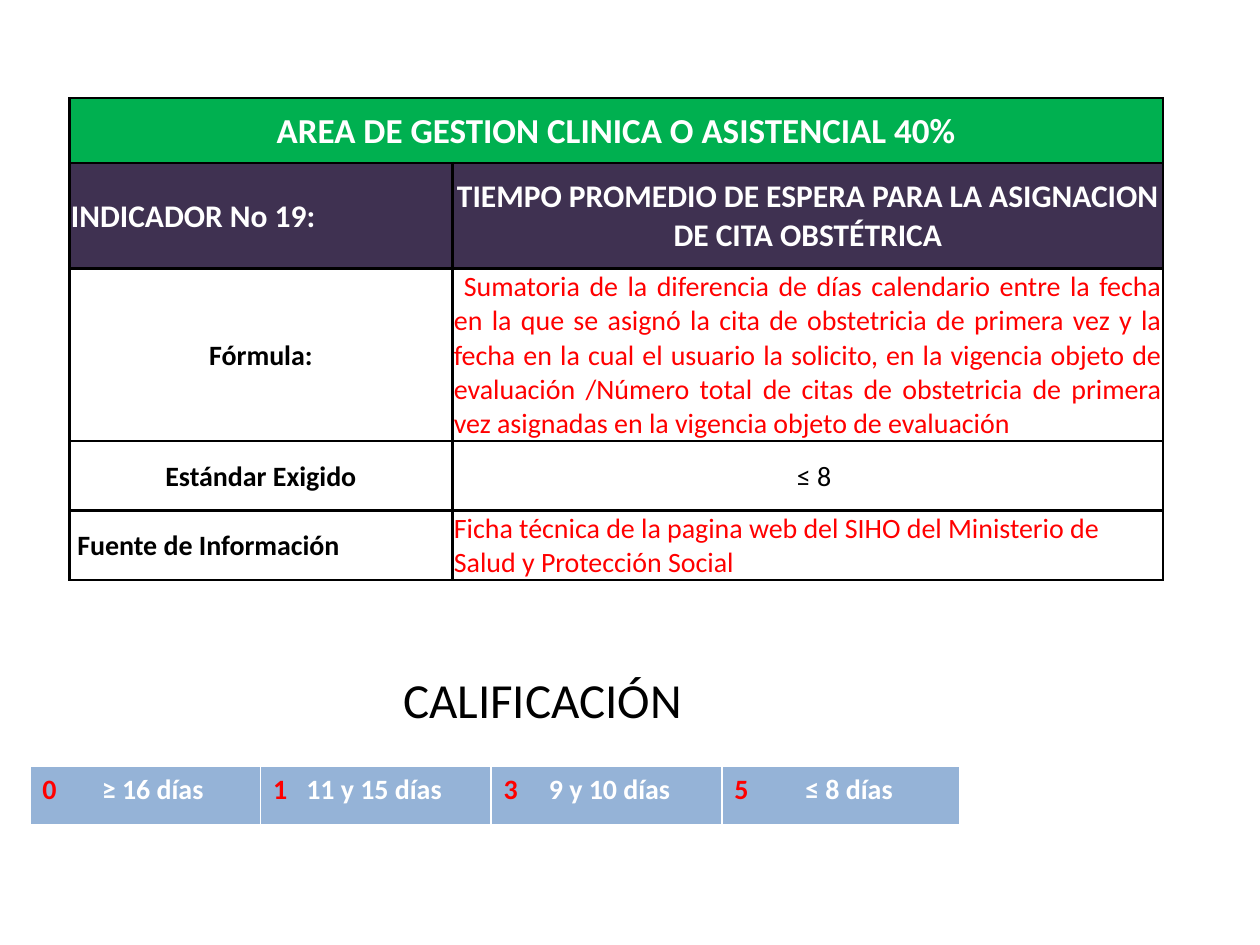
from lxml import etree
from pptx import Presentation
from pptx.dml.color import RGBColor
from pptx.enum.text import MSO_ANCHOR, MSO_AUTO_SIZE, PP_ALIGN
from pptx.oxml.ns import qn
from pptx.util import Cm, Pt

LEFT, CENTER, JUSTIFY = PP_ALIGN.LEFT, PP_ALIGN.CENTER, PP_ALIGN.JUSTIFY
TOP, MIDDLE = MSO_ANCHOR.TOP, MSO_ANCHOR.MIDDLE
COLORS = {"white": "FFFFFF", "black": "000000", "red": "FF0000",
          "green": "00B050", "purple": "3F3151", "blue": "95B3D7"}


def style_run(r, size, color, bold):
    r.font.name = "Calibri"
    r.font.size = Pt(size)
    r.font.bold = bold
    r.font.color.rgb = RGBColor.from_string(COLORS[color])


def style_cell(cell, fill, line, widths):
    tcPr = cell._tc.get_or_add_tcPr()
    for side, width in zip("LRTB", widths):
        ln = etree.SubElement(tcPr, qn(f"a:ln{side}"), w=str(Pt(width)))
        solid = etree.SubElement(ln, qn("a:solidFill"))
        etree.SubElement(solid, qn("a:srgbClr"), val=COLORS[line])
    if fill:
        cell.fill.solid()
        cell.fill.fore_color.rgb = RGBColor.from_string(COLORS[fill])
    else:
        cell.fill.background()


prs = Presentation()
prs.slide_width, prs.slide_height = Cm(25.4), Cm(19.05)
s = prs.slides.add_slide(prs.slide_layouts[5])

title = s.shapes.title
title.left, title.top, title.width, title.height = Cm(7.85), Cm(13.36), Cm(6.17), Cm(1.45)
tf = title.text_frame
tf.text = "CALIFICACIÓN"
tf.word_wrap = False
tf.auto_size = MSO_AUTO_SIZE.SHAPE_TO_FIT_TEXT
tf.vertical_anchor = TOP
tf.paragraphs[0].alignment = CENTER
style_run(tf.paragraphs[0].runs[0], 28, "black", False)

ratings = [("0", "≥ 16 días", 1.2), ("1", "11 y 15 días", 0.67),
           ("3", "9 y 10 días", 0.91), ("5", "≤ 8 días", 1.43)]
tbl = s.shapes.add_table(1, 4, Cm(0.6), Cm(15.45), Cm(18.75), Cm(1.21)).table
tbl.first_row = tbl.horz_banding = False
for col, width in zip(tbl.columns, [4.65, 4.65, 4.65, 4.8]):
    col.width = Cm(width)
for cell, (score, days, tab) in zip(tbl.rows[0].cells, ratings):
    style_cell(cell, "blue", "white", [1, 1, 1, 3])
    p = cell.text_frame.paragraphs[0]
    tabs = etree.SubElement(p._p.get_or_add_pPr(), qn("a:tabLst"))
    etree.SubElement(tabs, qn("a:tab"), pos=str(Cm(tab)), algn="l")
    for text, color in [(score + "\t", "red"), (days, "white")]:
        r = p.add_run()
        r.text = text
        style_run(r, 16, color, True)

formula = ("Sumatoria de la diferencia de días calendario entre la fecha en la que se asignó "
           "la cita de obstetricia de primera vez y la fecha en la cual el usuario la solicito, "
           "en la vigencia objeto de evaluación /Número total de citas de obstetricia de primera "
           "vez asignadas en la vigencia objeto de evaluación")
source = "Ficha técnica de la pagina web del SIHO del Ministerio de Salud y Protección Social"
cells = [
    (0, 0, "AREA DE GESTION CLINICA O ASISTENCIAL 40%", 20, "white", True, CENTER, "green", 0),
    (1, 0, "INDICADOR No 19:", 18, "white", True, LEFT, "purple", 0),
    (1, 1, "TIEMPO PROMEDIO DE ESPERA PARA LA ASIGNACION DE CITA OBSTÉTRICA",
     18, "white", True, CENTER, "purple", 0),
    (2, 0, "Fórmula:", 16, "black", True, CENTER, None, 0),
    (2, 1, formula, 16, "red", False, JUSTIFY, None, 0.2),
    (3, 0, "Estándar Exigido", 16, "black", True, CENTER, None, 0),
    (3, 1, "≤ 8", 16, "black", False, CENTER, None, 0.25),
    (4, 0, "Fuente de Información", 16, "black", True, LEFT, None, 0.13),
    (4, 1, source, 16, "red", False, LEFT, None, 0),
]
tbl = s.shapes.add_table(5, 2, Cm(1.4), Cm(1.98), Cm(22.05), Cm(9.71)).table
tbl.first_row = tbl.horz_banding = False
for col, width in zip(tbl.columns, [7.72, 14.33]):
    col.width = Cm(width)
for row, height in zip(tbl.rows, [1.3, 2.13, 3.48, 1.4, 1.4]):
    row.height = Cm(height)
tbl.cell(0, 0).merge(tbl.cell(0, 1))
style_cell(tbl.cell(0, 1), "green", "black", [1.5] * 4)
for row, col, text, size, color, bold, align, fill, indent in cells:
    cell = tbl.cell(row, col)
    cell.margin_left = cell.margin_right = cell.margin_top = Cm(0.03)
    cell.margin_bottom = 0
    cell.vertical_anchor = MIDDLE
    style_cell(cell, fill, "black", [1.5] * 4)
    p = cell.text_frame.paragraphs[0]
    p.text = text
    p.alignment = align
    p._p.get_or_add_pPr().set("indent", str(Cm(indent)))
    style_run(p.runs[0], size, color, bold)

prs.save("out.pptx")
